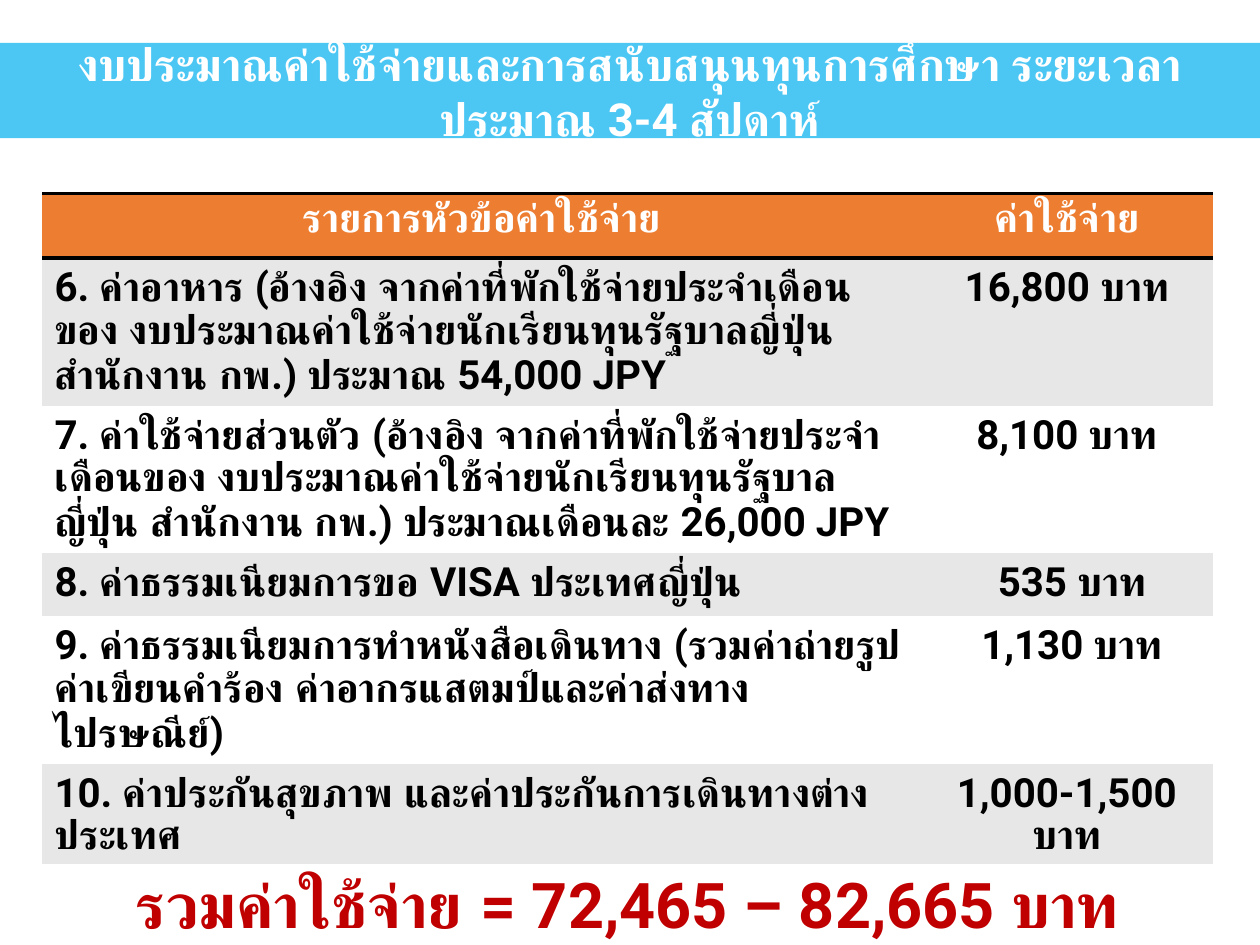
from lxml import etree
from pptx import Presentation
from pptx.dml.color import RGBColor
from pptx.enum import text
from pptx.oxml import ns
from pptx.util import Pt

WHITE = RGBColor(0xFF, 0xFF, 0xFF)
BLACK = RGBColor(0, 0, 0)
SKY = RGBColor(0x00, 0xB0, 0xF0)
ORANGE = RGBColor(0xED, 0x7D, 0x31)
GREY = RGBColor(0xE7, 0xE7, 0xE7)
RED = RGBColor(0xC0, 0, 0)
FONT = "Roboto"
NO_STYLE_NO_GRID = "{2D5ABB26-0587-4C30-8999-92F81FD0307C}"
LEFT, CENTER = text.PP_ALIGN.LEFT, text.PP_ALIGN.CENTER

TITLE = "งบประมาณค่าใช้จ่ายและการสนับสนุนทุนการศึกษา ระยะเวลาประมาณ 3-4 สัปดาห์"
HEADER = ("รายการหัวข้อค่าใช้จ่าย", "ค่าใช้จ่าย")
EXPENSES = [
    ("6. ค่าอาหาร (อ้างอิง จากค่าที่พักใช้จ่ายประจำเดือนของ งบประมาณค่าใช้จ่ายนักเรียนทุนรัฐบาลญี่ปุ่น "
     "สำนักงาน กพ.) ประมาณ 54,000 JPY", "16,800 บาท"),
    ("7. ค่าใช้จ่ายส่วนตัว (อ้างอิง จากค่าที่พักใช้จ่ายประจำเดือนของ งบประมาณค่าใช้จ่ายนักเรียนทุนรัฐบาลญี่ปุ่น "
     "สำนักงาน กพ.) ประมาณเดือนละ 26,000 JPY", "8,100 บาท"),
    ("8. ค่าธรรมเนียมการขอ VISA ประเทศญี่ปุ่น", " 535 บาท"),
    ("9. ค่าธรรมเนียมการทำหนังสือเดินทาง (รวมค่าถ่ายรูป ค่าเขียนคำร้อง "
     "ค่าอากรแสตมป์และค่าส่งทางไปรษณีย์)", " 1,130 บาท"),
    ("10. ค่าประกันสุขภาพ และค่าประกันการเดินทางต่างประเทศ", "1,000-1,500 บาท"),
]
TOTAL = "รวมค่าใช้จ่าย = 72,465 – 82,665 บาท"

COLUMN_WIDTHS = (502.5, 166.5)
ROW_HEIGHTS = (37, 65.5, 76.5, 36, 65.5, 44, 54)


def write(frame, words, size, color, align):
    paragraph = frame.paragraphs[0]
    paragraph.alignment = align
    run = paragraph.add_run()
    run.text = words
    for name, value in {"name": FONT, "size": Pt(size), "bold": True}.items():
        setattr(run.font, name, value)
    run.font.color.rgb = color
    return run


def rule(cell, sides):
    """Draw black borders on the given sides (T, B)."""
    properties = cell._tc.get_or_add_tcPr()
    for position, side in enumerate(sides):
        line = etree.Element(ns.qn(f"a:ln{side}"), w=str(Pt(2.25)))
        fill = etree.SubElement(line, ns.qn("a:solidFill"))
        etree.SubElement(fill, ns.qn("a:srgbClr"), val=str(BLACK))
        properties.insert(position, line)


def fill_cell(cell, words, size, color, align, background, sides=""):
    cell.fill.solid()
    cell.fill.fore_color.rgb = background
    write(cell.text_frame, words, size, color, align)
    rule(cell, sides)


def add_title(slide):
    title = slide.shapes.title
    place = {"left": 0, "top": Pt(24.5), "width": Pt(720), "height": Pt(54.5)}
    for name, value in place.items():
        setattr(title, name, value)
    title.fill.solid()
    title.fill.fore_color.rgb = SKY
    tint = title._element.spPr.find(".//" + ns.qn("a:srgbClr"))
    etree.SubElement(tint, ns.qn("a:alpha"), val="70000")
    frame = title.text_frame
    frame.auto_size = text.MSO_AUTO_SIZE.NONE
    frame.word_wrap = True
    frame.vertical_anchor = text.MSO_ANCHOR.MIDDLE
    heading = write(frame, TITLE, 26, WHITE, CENTER)
    # Thai letters take the complex-script font
    etree.SubElement(heading.font._element, ns.qn("a:cs"), typeface=FONT)


def add_budget(slide):
    budget = slide.shapes.add_table(
        len(ROW_HEIGHTS), len(COLUMN_WIDTHS), Pt(24), Pt(110.5),
        Pt(sum(COLUMN_WIDTHS)), Pt(sum(ROW_HEIGHTS))).table
    budget._tbl.tblPr.find(ns.qn("a:tableStyleId")).text = NO_STYLE_NO_GRID
    for column, width in zip(budget.columns, COLUMN_WIDTHS):
        column.width = Pt(width)
    for row, height in zip(budget.rows, ROW_HEIGHTS):
        row.height = Pt(height)

    for column, label in enumerate(HEADER):
        fill_cell(budget.cell(0, column), label, 23, WHITE, CENTER, ORANGE, "TB")
    for row, expense in enumerate(EXPENSES, 1):
        background = GREY if row % 2 else WHITE
        for column, (words, align) in enumerate(zip(expense, (LEFT, CENTER))):
            fill_cell(budget.cell(row, column), words, 23, BLACK, align, background)
    last = len(EXPENSES) + 1
    total = budget.cell(last, 0)
    total.merge(budget.cell(last, 1))
    fill_cell(total, TOTAL, 36, RED, CENTER, WHITE, "B")


def main():
    deck = Presentation()
    deck.slide_width, deck.slide_height = Pt(720), Pt(540)
    slide = deck.slides.add_slide(deck.slide_layouts[5])
    add_title(slide)
    add_budget(slide)
    deck.save("out.pptx")


if __name__ == "__main__":
    main()
